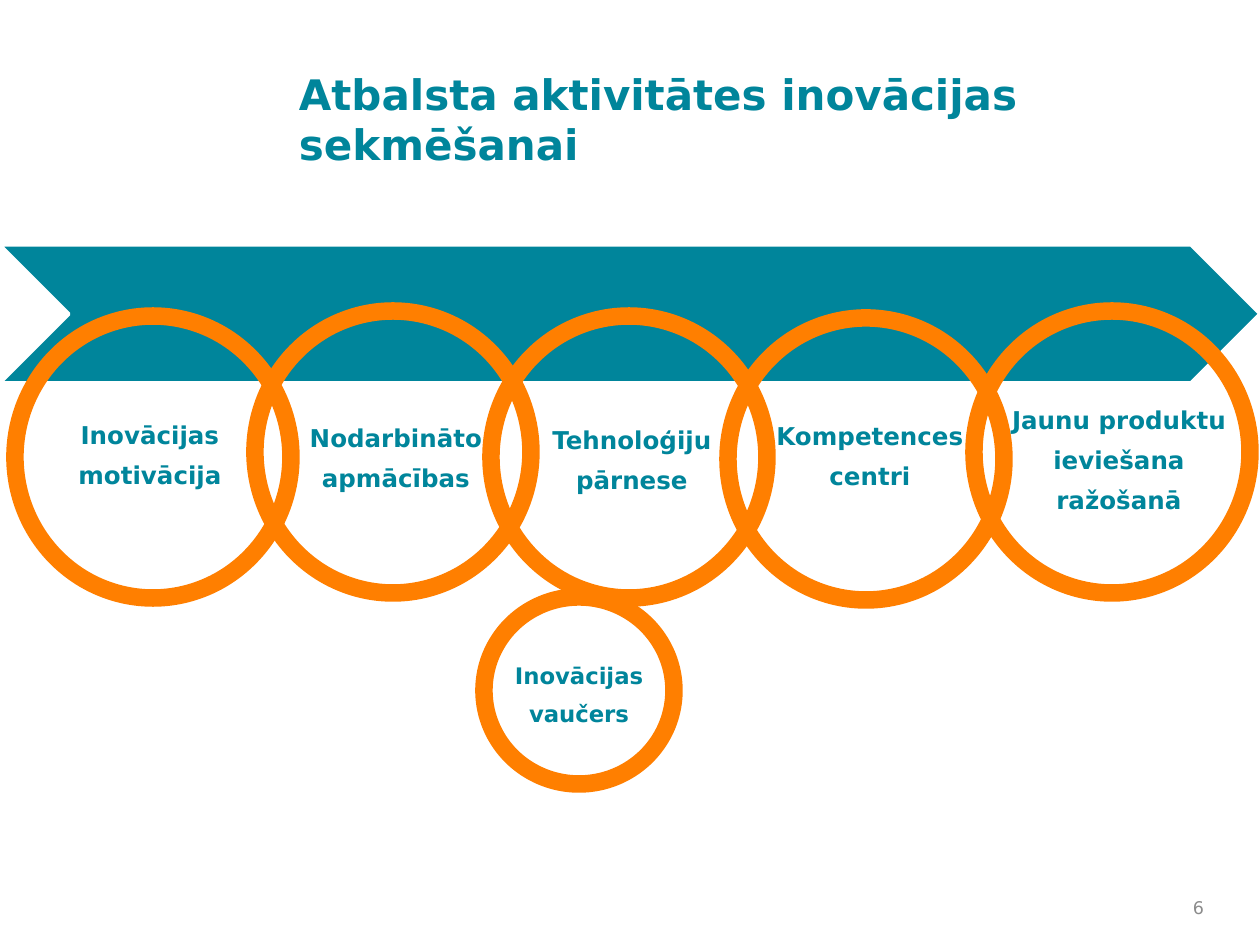
import pptx
import pptx.util
from pptx.dml.color import RGBColor
from pptx.enum.shapes import MSO_SHAPE
from pptx.enum.text import MSO_ANCHOR, PP_ALIGN

TEAL = RGBColor(0x00, 0x85, 0x9B)
ORANGE = RGBColor(0xFF, 0x7F, 0x00)
GREY = RGBColor(0x8C, 0x8C, 0x8C)
WHITE = RGBColor(0xFF, 0xFF, 0xFF)
FONT = "DejaVu Sans"

TITLE = "Atbalsta aktivitātes inovācijas sekmēšanai"
PAGE = "6"
RING_SIZE = (276, 282)
# label lines, ring (left, top), label box (left, top, width, height)
ACTIVITIES = [
    (["Inovācijas", "motivācija"], (15, 316), (31, 412, 238, 83)),
    (["Nodarbināto", "apmācības"], (255, 311), (277, 415, 238, 83)),
    (["Tehnoloģiju", "pārnese"], (491, 316), (513, 417, 238, 83)),
    (["Kompetences", "centri"], (728, 318), (751, 413, 238, 83)),
    (["Jaunu produktu", "ieviešana", "ražošanā"], (974, 311), (978, 397, 282, 123)),
]
VOUCHER = ["Inovācijas", "vaučers"]
VOUCHER_RING = (484, 597, 190, 187)
VOUCHER_LABEL = (460, 654, 238, 78)


def px(*lengths):
    return [pptx.util.Emu(round(n * 914400 / 126)) for n in lengths]


def write(frame, lines, size, color=TEAL, bold=True, align=PP_ALIGN.LEFT,
          anchor=MSO_ANCHOR.TOP, insets=(13, 6, 13, 6), gap=0):
    frame.word_wrap = True
    frame.vertical_anchor = anchor
    (frame.margin_left, frame.margin_top,
     frame.margin_right, frame.margin_bottom) = px(*insets)
    for i, line in enumerate(lines):
        paragraph = frame.add_paragraph() if i else frame.paragraphs[0]
        paragraph.alignment = align
        if i:
            paragraph.space_before = pptx.util.Pt(gap)
        run = paragraph.add_run()
        run.text = line
        run.font.name = FONT
        run.font.size = pptx.util.Pt(size)
        run.font.bold = bold
        run.font.color.rgb = color


def add_outlined(kind, box, line, width, fill=None):
    shape = slide.shapes.add_shape(kind, *px(*box))
    shape.shadow.inherit = False
    if fill is None:
        shape.fill.background()
    else:
        shape.fill.solid()
        shape.fill.fore_color.rgb = fill
    shape.line.color.rgb = line
    shape.line.width = pptx.util.Pt(width)


def add_activity(lines, ring, label, size):
    add_outlined(MSO_SHAPE.OVAL, ring, ORANGE, 10)
    write(slide.shapes.add_textbox(*px(*label)).text_frame, lines, size,
          align=PP_ALIGN.CENTER, insets=(0, 8, 0, 0), gap=6)


deck = pptx.Presentation()
deck.slide_width, deck.slide_height = px(1260, 945)
slide = deck.slides.add_slide(deck.slide_layouts[5])

# Title
title = slide.shapes.title
title.left, title.top, title.width, title.height = px(286, 62, 931, 142)
write(title.text_frame, [TITLE], 24)

# Band behind the rings
add_outlined(MSO_SHAPE.CHEVRON, (0, 245, 1260, 138), WHITE, 2, fill=TEAL)

# Chain of activities and the voucher below it
for lines, corner, label in ACTIVITIES:
    add_activity(lines, corner + RING_SIZE, label, 14)
add_activity(VOUCHER, VOUCHER_RING, VOUCHER_LABEL, 13)

# Page number
write(slide.shapes.add_textbox(*px(1175, 886, 42, 42)).text_frame, [PAGE], 10,
      color=GREY, bold=False, align=PP_ALIGN.RIGHT, anchor=MSO_ANCHOR.MIDDLE)

deck.save("out.pptx")
